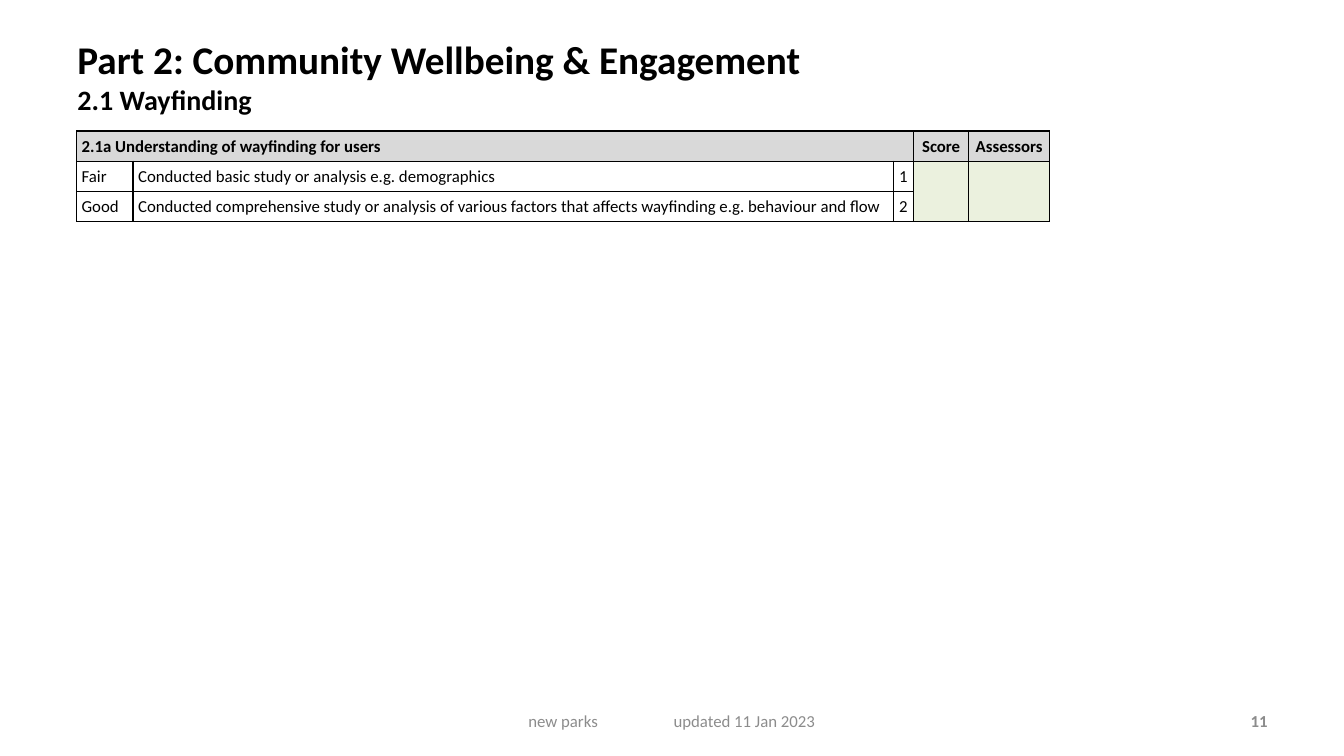
from dataclasses import dataclass

from lxml.etree import SubElement as Sub
from pptx import Presentation
from pptx.dml.color import RGBColor
from pptx.enum.text import MSO_ANCHOR as Anchor, PP_ALIGN as Align
from pptx.oxml.ns import qn
from pptx.util import Inches, Pt

BLACK, GREY, HEAD, SCORE = "000000", "8C8C8C", "D9D9D9", "EBF1DE"
COLS = [0.56, 7.54, 0.2, 0.55, 0.8]
ROW = 0.3


@dataclass
class Part:
    text: str
    size: float = 12
    bold: bool = False
    color: str = BLACK


@dataclass
class Box:
    left: float
    top: float
    width: float
    height: float
    lines: list[Part]
    align: Align = Align.LEFT
    anchor: Anchor = Anchor.MIDDLE
    inset: float = 0.1
    tab: float = 0


def rgb(color: str) -> RGBColor:
    return RGBColor.from_string(color)


def add_run(para, part: Part) -> None:
    run = para.add_run()
    run.text = part.text
    font = run.font
    font.name, font.size, font.bold = "Calibri", Pt(part.size), part.bold
    font.color.rgb = rgb(part.color)


def add_box(slide, box: Box) -> None:
    place = [Inches(n) for n in (box.left, box.top, box.width, box.height)]
    frame = slide.shapes.add_textbox(*place).text_frame
    frame.word_wrap = True
    frame.vertical_anchor = box.anchor
    frame.margin_left = Inches(box.inset)
    para = frame.paragraphs[0]
    para.alignment = box.align
    if box.tab:
        tabs = Sub(para._p.get_or_add_pPr(), qn("a:tabLst"))
        Sub(tabs, qn("a:tab"), pos=str(Inches(box.tab)), algn="l")
    for i, part in enumerate(box.lines):
        if i:
            para.add_line_break()
        add_run(para, part)


def add_edges(cell) -> None:
    props = cell._tc.get_or_add_tcPr()
    for side in ("lnL", "lnR", "lnT", "lnB"):
        line = Sub(props, qn(f"a:{side}"), w=str(Pt(1)))
        fill = Sub(line, qn("a:solidFill"))
        Sub(fill, qn("a:srgbClr"), val=BLACK)


def fill_cell(cell, part: Part, align: Align, shade: str) -> None:
    cell.margin_left = cell.margin_right = Inches(0.05)
    cell.margin_top = cell.margin_bottom = Inches(0.05)
    cell.vertical_anchor = Anchor.MIDDLE
    add_edges(cell)
    if shade:
        cell.fill.solid()
        cell.fill.fore_color.rgb = rgb(shade)
    else:
        cell.fill.background()
    para = cell.text_frame.paragraphs[0]
    para.alignment = align
    add_run(para, part)


def add_grid(slide, left: float, top: float, rows: list[list[str]]) -> None:
    frame = slide.shapes.add_table(
        len(rows), len(COLS), Inches(left), Inches(top),
        Inches(sum(COLS)), Inches(ROW * len(rows)))
    table = frame.table
    table.first_row = table.horz_banding = False
    for col, width in zip(table.columns, COLS):
        col.width = Inches(width)
    for r, texts in enumerate(rows):
        table.rows[r].height = Inches(ROW)
        for c, text in enumerate(texts):
            align = Align.CENTER if c > 1 else Align.LEFT
            shade = HEAD if r == 0 else SCORE if c > 2 else ""
            fill_cell(table.cell(r, c), Part(text, bold=r == 0), align, shade)
    # Heading spans the criteria; score cells span both levels
    table.cell(0, 0).merge(table.cell(0, 2))
    for c in (3, 4):
        table.cell(1, c).merge(table.cell(2, c))


def main() -> None:
    deck = Presentation()
    deck.slide_width, deck.slide_height = Inches(13.33), Inches(7.5)
    slide = deck.slides.add_slide(deck.slide_layouts[6])

    # Title
    add_box(slide, Box(0.67, 0.3, 10.36, 0.99, [
        Part("Part 2: Community Wellbeing & Engagement", 28, True),
        Part("2.1 Wayfinding", 20, True)], anchor=Anchor.TOP))

    # Scoring table
    add_grid(slide, 0.76, 1.3, [
        ["2.1a Understanding of wayfinding for users", "", "", "Score", "Assessors"],
        ["Fair", "Conducted basic study or analysis e.g. demographics", "1", "", ""],
        ["Good", "Conducted comprehensive study or analysis of various factors "
         "that affects wayfinding e.g. behaviour and flow", "2", "", ""],
    ])

    # Footer and page number
    add_box(slide, Box(4.56, 6.95, 4.22, 0.4, [
        Part("new parks\tupdated 11 Jan 2023", color=GREY)],
        inset=0.68, tab=1.44))
    add_box(slide, Box(9.56, 6.95, 3.11, 0.4, [
        Part("11", bold=True, color=GREY)], align=Align.RIGHT))

    deck.save("out.pptx")


if __name__ == "__main__":
    main()
